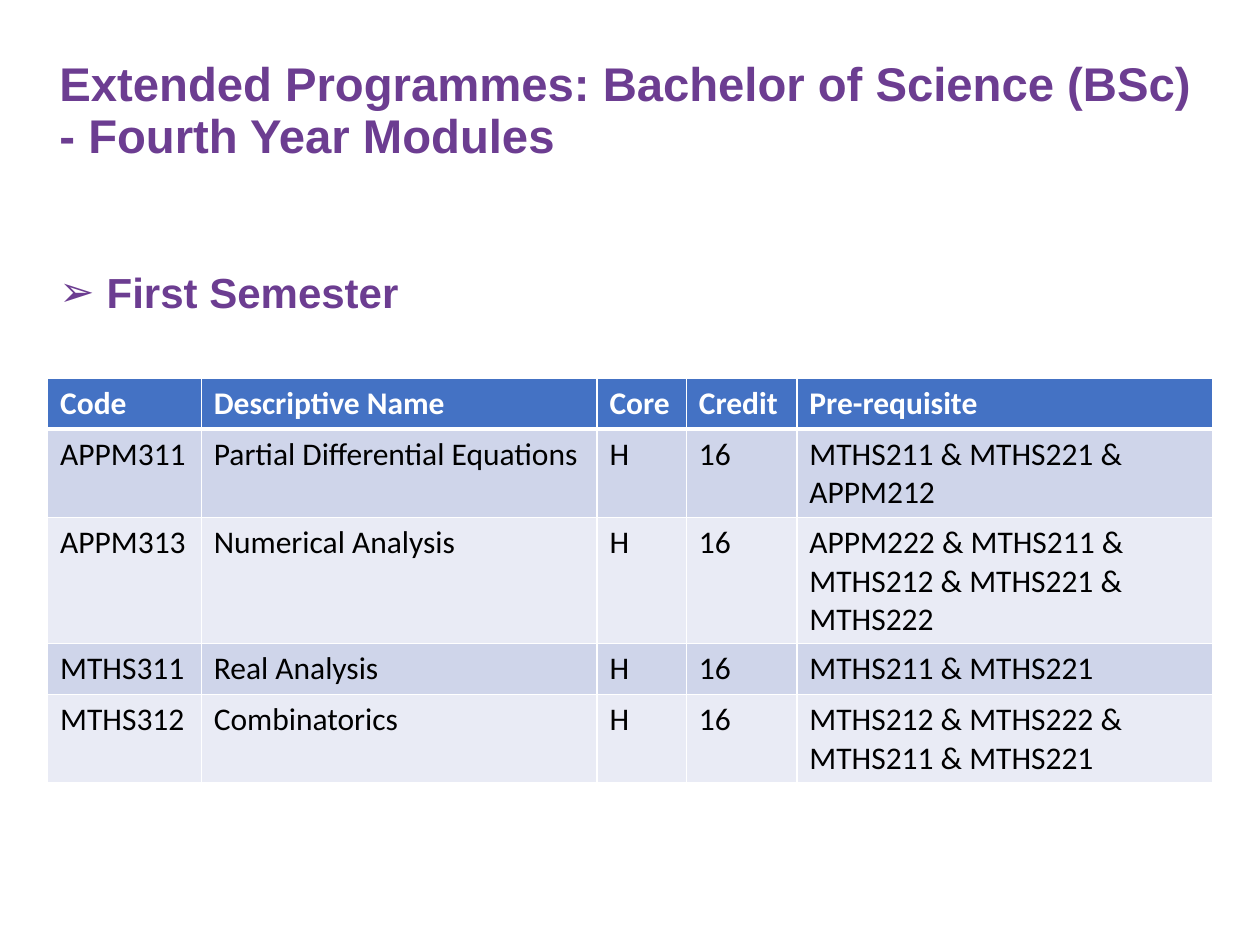
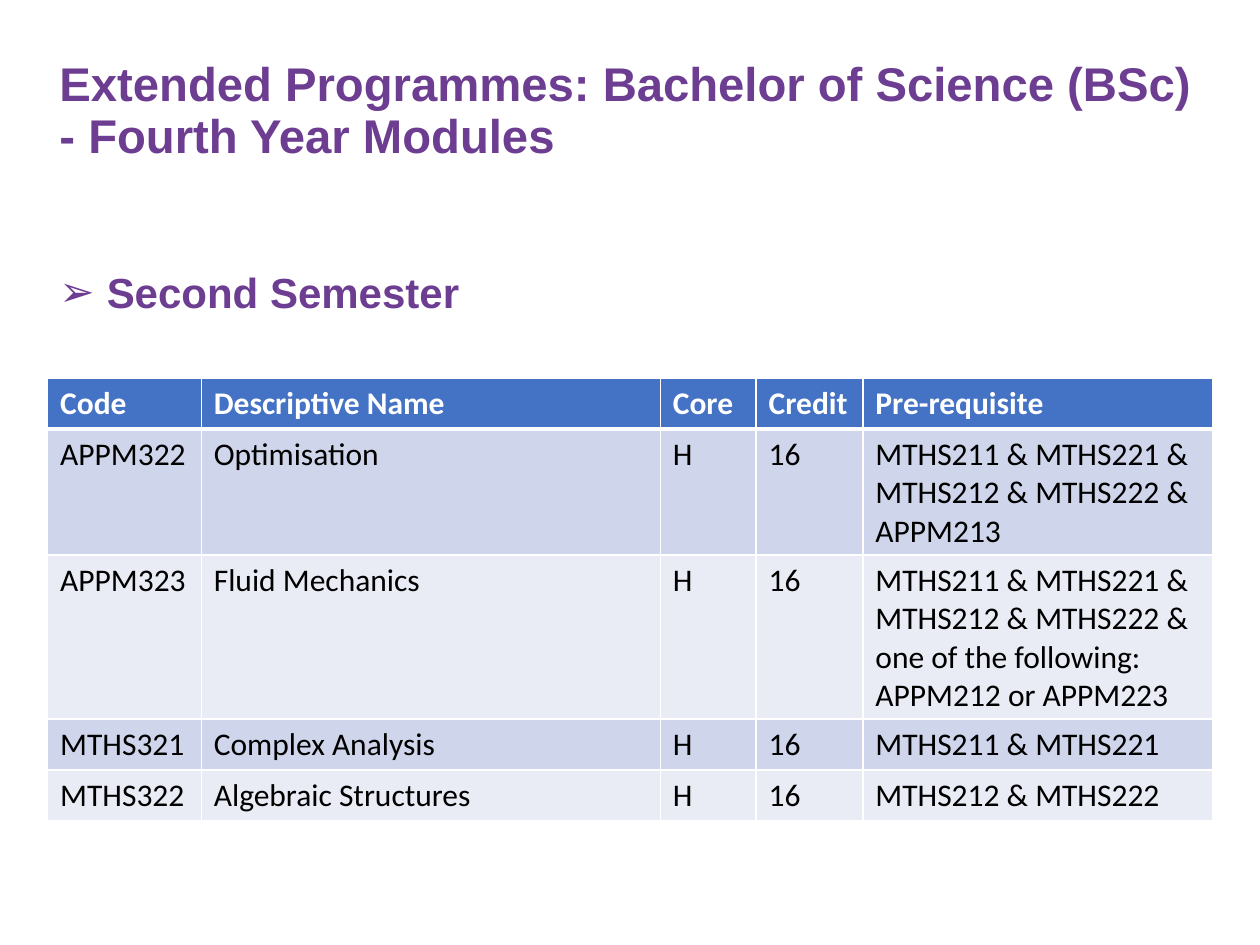
from lxml import etree
from pptx import Presentation
from pptx import util as u
from pptx.dml.color import RGBColor
from pptx.enum import text
from pptx.oxml import ns

PURPLE, WHITE, BLACK = "6C3D91", "FFFFFF", "000000"
HEADER_FILL, BAND_FILLS = "4472C4", ("CFD5EA", "E9EBF5")
TITLE = "Extended Programmes: Bachelor of Science (BSc)\v- Fourth Year Modules"
HEADINGS = ("Code", "Descriptive Name", "Core", "Credit", "Pre-requisite")
SEMESTERS = [
    ("First Semester", 210, (87.8, 226.1, 51.1, 63.2, 237.6), [
        ("APPM311", "Partial Differential Equations", "MTHS211 & MTHS221 & APPM212"),
        ("APPM313", "Numerical Analysis", "APPM222 & MTHS211 & MTHS212 & MTHS221 & MTHS222"),
        ("MTHS311", "Real Analysis", "MTHS211 & MTHS221"),
        ("MTHS312", "Combinatorics", "MTHS212 & MTHS222 & MTHS211 & MTHS221"),
    ]),
    ("Second Semester", 245.5, (87.8, 262.3, 54.8, 61, 199.7), [
        ("APPM322", "Optimisation", "MTHS211 & MTHS221 & MTHS212 & MTHS222 & APPM213"),
        ("APPM323", "Fluid Mechanics",
         "MTHS211 & MTHS221 & MTHS212 & MTHS222 & one of the following: APPM212 or APPM223"),
        ("MTHS321", "Complex Analysis", "MTHS211 & MTHS221"),
        ("MTHS322", "Algebraic Structures", "MTHS212 & MTHS222"),
    ]),
]


def colour(value):
    """Turn a hex string into a colour."""
    return RGBColor.from_string(value)


def add_element(parent, tag, **attributes):
    """Append a DrawingML element to a parent."""
    return etree.SubElement(parent, ns.qn(tag), attributes)


class ModuleDeck:
    """Hold the shared style and the current slide."""

    def __init__(self):
        """Start an empty deck of 10 by 7.5 inches."""
        self.deck = Presentation()
        self.deck.slide_width, self.deck.slide_height = u.Pt(720), u.Pt(540)
        self.page = None

    def add_page(self):
        """Begin a new blank slide."""
        self.page = self.deck.slides.add_slide(self.deck.slide_layouts[6])

    def style(self, para, size, ink, bold=True, font="Arial"):
        """Format every run of a paragraph."""
        for span in para.runs:
            span.font.name, span.font.size, span.font.bold = font, u.Pt(size), bold
            span.font.color.rgb = colour(ink)

    def add_title(self, words):
        """Add the slide title."""
        box = self.page.shapes.add_textbox(u.Pt(26.9), u.Pt(28.8), u.Pt(666), u.Pt(70.6))
        frame = box.text_frame
        frame.word_wrap = True
        frame.vertical_anchor = text.MSO_ANCHOR.MIDDLE
        para = frame.paragraphs[0]
        para.text = words
        para.line_spacing = 0.9
        self.style(para, 27, PURPLE)

    def add_semester(self, words, width):
        """Add the bulleted semester heading."""
        box = self.page.shapes.add_textbox(u.Pt(26.9), u.Pt(149), u.Pt(width), u.Pt(36))
        frame = box.text_frame
        frame.word_wrap = False
        frame.auto_size = text.MSO_AUTO_SIZE.SHAPE_TO_FIT_TEXT
        para = frame.paragraphs[0]
        para.text = words
        properties = para._p.get_or_add_pPr()
        properties.set("marL", str(u.Pt(27)))
        properties.set("indent", str(-u.Pt(27)))
        add_element(properties, "a:buFont", typeface="Arial")
        add_element(properties, "a:buChar", char="➢")
        self.style(para, 24, PURPLE)

    def add_borders(self, cell, top, bottom):
        """Draw white borders around a cell."""
        properties = cell._tc.get_or_add_tcPr()
        for side, width in (("L", 1), ("R", 1), ("T", top), ("B", bottom)):
            line = add_element(properties, f"a:ln{side}", w=str(u.Pt(width)))
            add_element(add_element(line, "a:solidFill"), "a:srgbClr", val=WHITE)

    def add_modules(self, widths, modules):
        """Add the module table with a header and banded rows."""
        rows = [HEADINGS] + [(code, name, "H", "16", needs) for code, name, needs in modules]
        table = self.page.shapes.add_table(
            len(rows), len(widths), u.Pt(27.2), u.Pt(216), u.Pt(666), u.Pt(29.2 * len(rows))).table
        for column, width in zip(table.columns, widths):
            column.width = u.Pt(width)
        for i, row in enumerate(rows):
            table.rows[i].height = u.Pt(29.2)
            header = i == 0
            for j, words in enumerate(row):
                cell = table.cell(i, j)
                self.add_borders(cell, 3 if i == 1 else 1, 3 if header else 1)
                cell.fill.solid()
                cell.fill.fore_color.rgb = colour(HEADER_FILL if header else BAND_FILLS[(i - 1) % 2])
                cell.text_frame.text = words
                ink = WHITE if header else BLACK
                self.style(cell.text_frame.paragraphs[0], 18, ink, header, "Calibri")


def main():
    """Build one slide per semester."""
    builder = ModuleDeck()
    for semester, width, columns, modules in SEMESTERS:
        builder.add_page()
        builder.add_title(TITLE)
        builder.add_semester(semester, width)
        builder.add_modules(columns, modules)
    builder.deck.save("out.pptx")


if __name__ == "__main__":
    main()
